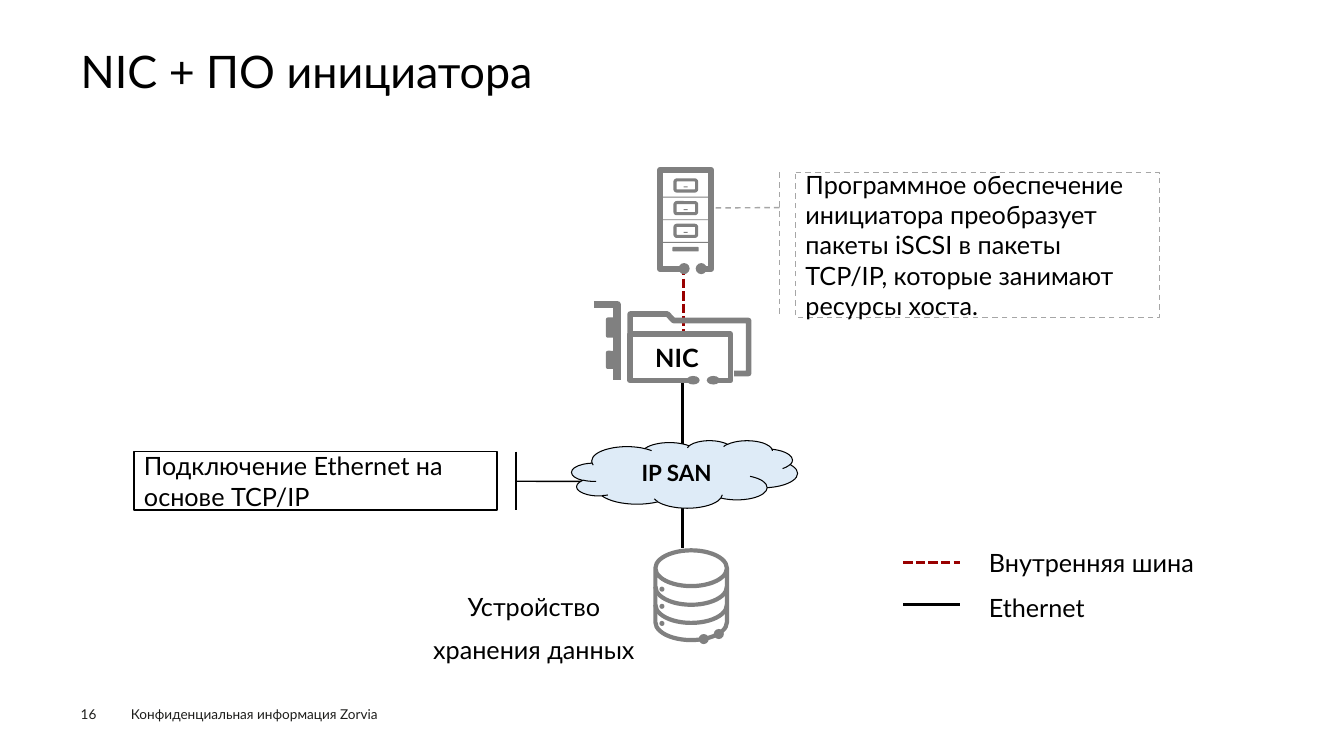
from pptx import Presentation
from pptx.dml.color import RGBColor as Rgb
from pptx.enum.dml import MSO_LINE as Dash
from pptx.enum.shapes import MSO_CONNECTOR as Link, MSO_SHAPE as Form
from pptx.enum.text import MSO_ANCHOR as Anchor, PP_ALIGN as Align
from pptx.oxml.ns import qn
from pptx.util import Inches, Pt
from lxml.etree import SubElement as Sub

INK = {"black": "000000", "foot": "1D1D1B", "red": "990000",
       "dash": "A6A6A6", "cloud": "DEEBF7", "icon": "808080"}
FONT = "Lato"

deck = Presentation()
deck.slide_width, deck.slide_height = Inches(13.33), Inches(7.5)
slide = deck.slides.add_slide(deck.slide_layouts[6])
parts = slide.shapes
CELL = Inches(0.1)  # grid step: 133.3 columns by 75 rows


def draw(form, box, fill=None, edge=None, wide=1):
    item = parts.add_shape(form, *[int(n * CELL) for n in box])
    item.shadow.inherit = False
    if fill:
        item.fill.solid()
        item.fill.fore_color.rgb = Rgb.from_string(INK[fill])
    else:
        item.fill.background()
    if edge:
        item.line.color.rgb = Rgb.from_string(INK[edge])
        item.line.width = Pt(wide)
    else:
        item.line.fill.background()
    return item


def write(item, words, size=18, tone="black", bold=False, side=Align.LEFT, gap=1.0):
    para = item.text_frame.paragraphs[0]
    para.text, para.alignment, para.line_spacing = words, side, gap
    para.font.name, para.font.size, para.font.bold = FONT, Pt(size), bold
    para.font.color.rgb = Rgb.from_string(INK[tone])


# Title, footer, legend and storage labels
for box, words, size, tone, gap, pad, side in [
    ((12, 69.5, 32.9, 2.6), "Конфиденциальная информация Zorvia", 9.7, "foot", 1.0, True, Align.LEFT),
    ((8, 70, 5.5, 1.6), "16", 9.7, "foot", 1.0, False, Align.LEFT),
    ((8, 4.9, 117.3, 5.4), "NIC + ПО инициатора", 32, "black", 0.9, False, Align.LEFT),
    ((97.1, 52.6, 26.3, 4.9), "Внутренняя шина", 18, "black", 1.4, True, Align.LEFT),
    ((97.1, 57.1, 14.3, 4.9), "Ethernet", 18, "black", 1.4, True, Align.LEFT),
    ((40.5, 57, 24.9, 4.9), "Устройство хранения данных", 18, "black", 1.4, True, Align.CENTER),
]:
    label = parts.add_textbox(*[int(n * CELL) for n in box])
    frame = label.text_frame
    frame.word_wrap = True
    if not pad:
        frame.margin_left = frame.margin_right = frame.margin_top = frame.margin_bottom = 0
    write(label, words, size, tone, side=side, gap=gap)

# Callouts
for box, turns, tone, dash, words in [
    ((78.9, 17.1, 36.1, 14.4), (0.243, -0.044, 0.246, -0.239), "dash", Dash.DASH,
     "Программное обеспечение инициатора преобразует пакеты iSCSI в пакеты TCP/IP, которые занимают ресурсы хоста."),
    ((13.3, 44.8, 36, 5.8), (0.508, 1.052, 0.511, 1.245), "black", Dash.SOLID,
     "Подключение Ethernet на основе TCP/IP"),
]:
    note = draw(Form.LINE_CALLOUT_1_BORDER_AND_ACCENT_BAR, box, edge=tone)
    note.line.dash_style = dash
    for i, turn in enumerate(turns):
        note.adjustments[i] = turn
    note.text_frame.vertical_anchor = Anchor.MIDDLE
    note.text_frame.margin_right = Inches(0.15)
    write(note, words)

# Links: legend keys, internal bus, Ethernet
for ends, tone, dash in [
    ((89.6, 55.8, 95.2, 55.8), "red", Dash.SQUARE_DOT),
    ((89.6, 60, 95.2, 60), "black", Dash.SOLID),
    ((67.8, 26.4, 67.8, 32.9), "red", Dash.SQUARE_DOT),
    ((67.7, 38, 67.7, 54.4), "black", Dash.SOLID),
]:
    link = parts.add_connector(Link.STRAIGHT, *[int(n * CELL) for n in ends])
    link.line.color.rgb = Rgb.from_string(INK[tone])
    link.line.width = Pt(2.25)
    link.line.dash_style = dash
    Sub(link._element.spPr, qn("a:effectLst"))

# Cloud
cloud = draw(Form.CLOUD, (56.7, 43.7, 22.4, 6.7), "cloud", "black", 0.75)
cloud.text_frame.vertical_anchor = Anchor.MIDDLE
write(cloud, "IP SAN", 16, bold=True, side=Align.CENTER)

# Icon outlines: server case, card front, card back, card bracket
for dots, wide in [
    ([(69.4, 26.7), (70.55, 26.7), (70.55, 16.85), (65.45, 16.85), (65.45, 26.7), (67.6, 26.7)], 4),
    ([(70.8, 37.75), (72.45, 37.75), (72.45, 33.15), (62.5, 33.15), (62.5, 37.75), (68.8, 37.75)], 4),
    ([(72.8, 37.05), (74.25, 37.05), (74.25, 31.8), (66.8, 31.8), (66.2, 31.15), (62.5, 31.15),
      (62.5, 33)], 4),
    ([(58.9, 30.2), (61.2, 30.2), (61.2, 37.7)], 5.5),
]:
    spots = [(int(x * CELL), int(y * CELL)) for x, y in dots]
    pen = parts.build_freeform(*spots[0])
    pen.add_line_segments(spots[1:], close=False)
    edge = pen.convert_to_shape()
    edge.shadow.inherit = False
    edge.fill.background()
    edge.line.color.rgb = Rgb.from_string(INK["icon"])
    edge.line.width = Pt(wide)
    Sub(edge.line._get_or_add_ln(), qn("a:round"))

# Server drawers
for i in range(3):
    top = 17.85 + 2.25 * i
    draw(Form.ROUNDED_RECTANGLE, (66.95, top, 2.15, 1.1), edge="icon", wide=2.25)
    draw(Form.RECTANGLE, (67.8, top + 0.65, 0.4, 0.1), "icon")
    draw(Form.RECTANGLE, (65.5, top + 1.65, 5.1, 0.1), "icon")

# Server slot and card contacts
for box in [(66.7, 24.5, 2.6, 0.45), (60.1, 31.5, 1.1, 2), (60.1, 34.8, 1.1, 1.8)]:
    draw(Form.ROUNDED_RECTANGLE, box, "icon")

# Storage cylinder with its tiers
tank = draw(Form.CAN, (65, 54.6, 7.1, 8.9), edge="icon", wide=3)
tank.adjustments[0] = 0.5
for top in (56.4, 58.2):
    tier = draw(Form.ARC, (65, top, 7.1, 3.6), edge="icon", wide=3)
    tier.adjustments[0], tier.adjustments[1] = 0, 108

# Round ports and lamps
for box in [
    (67.3, 26.1, 1.1, 1.1), (69, 26.1, 1.1, 1.1),
    (68.1, 37.3, 1.3, 0.85), (70.1, 37.3, 1.3, 0.85),
    (69.3, 62.9, 1, 1), (70.8, 62.4, 1, 1),
    *[(65.4, 58.2 + 1.7 * i, 0.5, 0.5) for i in range(3)],
]:
    draw(Form.OVAL, box, "icon")

# Card label
card = parts.add_textbox(int(64 * CELL), int(33.5 * CELL), int(6.1 * CELL), 4 * CELL)
card.text_frame.word_wrap = False
card.text_frame.margin_right = 0
write(card, "NIC", bold=True)

deck.save("out.pptx")
